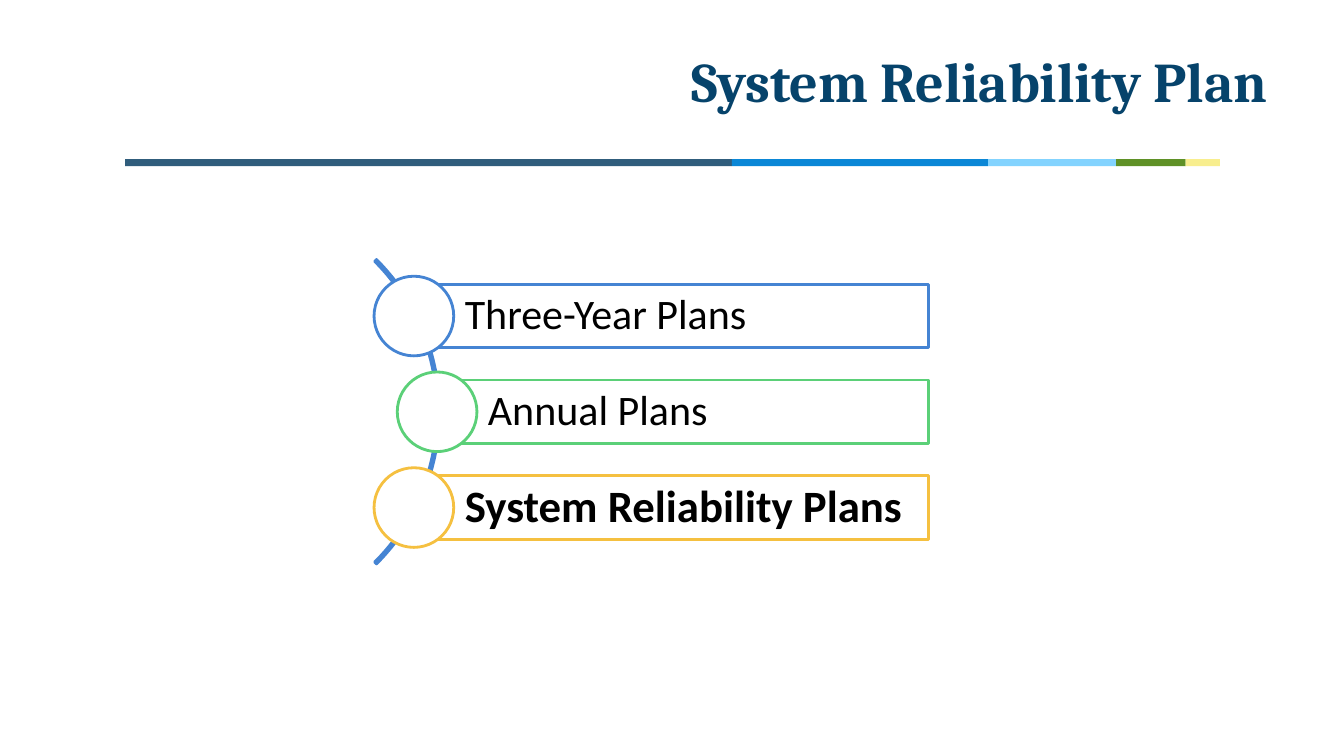
import pptx
import pptx.util
import pptx.dml.color
import pptx.enum.shapes
import pptx.enum.text

RGBColor = pptx.dml.color.RGBColor
Shapes = pptx.enum.shapes.MSO_SHAPE
Anchor = pptx.enum.text.MSO_ANCHOR
Align = pptx.enum.text.PP_ALIGN

PX = 9144
NAVY = RGBColor(0x06, 0x43, 0x6B)
BLACK = RGBColor(0x00, 0x00, 0x00)
WHITE = RGBColor(0xFF, 0xFF, 0xFF)
BLUE = RGBColor(0x45, 0x84, 0xD3)
GREEN = RGBColor(0x5B, 0xD0, 0x78)
GOLD = RGBColor(0xF5, 0xC0, 0x40)
STRIPES = [
    (602, RGBColor(0x30, 0x5D, 0x7C)),
    (254, RGBColor(0x0B, 0x87, 0xD6)),
    (127, RGBColor(0x83, 0xD3, 0xFE)),
    (69, RGBColor(0x5F, 0x91, 0x27)),
    (34, RGBColor(0xF8, 0xEE, 0x8E)),
]
PLANS = [
    ("Three-Year Plans", 411, BLUE, 30, False),
    ("Annual Plans", 434, GREEN, 30, False),
    ("System Reliability Plans", 411, GOLD, 32, True),
]
BARS_TOP, BAR_PITCH, BAR_HEIGHT, BARS_RIGHT = 282, 95, 63, 921
CIRCLE = 79


def px(*lengths):
    return [pptx.util.Emu(length * PX) for length in lengths]


def add_outline(slide, preset, box, fill=None, line=None):
    outline = slide.shapes.add_shape(preset, *px(*box))
    outline.shadow.inherit = False
    if fill is None:
        outline.fill.background()
    else:
        outline.fill.solid()
        outline.fill.fore_color.rgb = fill
    if line is None:
        outline.line.fill.background()
    else:
        outline.line.color.rgb = line
        outline.line.width = pptx.util.Pt(2)
    return outline


def write(holder, text, font, size, color, bold, align, insets):
    frame = holder.text_frame
    frame.text = text
    frame.word_wrap = True
    frame.vertical_anchor = Anchor.MIDDLE
    (frame.margin_left, frame.margin_top,
     frame.margin_right, frame.margin_bottom) = px(*insets)
    paragraph = frame.paragraphs[0]
    paragraph.alignment = align
    run_font = paragraph.runs[0].font
    run_font.name = font
    run_font.size = pptx.util.Pt(size)
    run_font.color.rgb = color
    run_font.bold = bold
    return paragraph


def add_title(slide, text):
    title = slide.shapes.add_textbox(*px(226, 17, 1041, 125))
    write(title, text, "Cambria", 40, NAVY, True, Align.RIGHT, (10, 5, 10, 5))


def add_stripes(slide):
    left = 124
    for width, color in STRIPES:
        add_outline(slide, Shapes.RECTANGLE, (left, 158, width, 7), color)
        left += width


def add_arc(slide):
    arc = add_outline(slide, Shapes.BLOCK_ARC, (9, 195, 427, 427), line=BLUE)
    for index, value in enumerate((189, 27, 0.006)):
        arc.adjustments[index] = value


def add_plan(slide, top, text, left, color, size, bold):
    bar = add_outline(slide, Shapes.RECTANGLE,
                      (left, top, BARS_RIGHT - left, BAR_HEIGHT), WHITE, color)
    paragraph = write(bar, text, "Calibri", size, BLACK, bold, Align.LEFT, (50, 8, 8, 8))
    paragraph.line_spacing = 0.9
    add_outline(slide, Shapes.OVAL,
                (left - 40, top - 8, CIRCLE, CIRCLE), WHITE, color)


def main():
    deck = pptx.Presentation()
    deck.slide_width, deck.slide_height = px(1333, 750)
    slide = deck.slides.add_slide(deck.slide_layouts[6])
    add_stripes(slide)
    add_title(slide, "System Reliability Plan")
    add_arc(slide)
    for row, plan in enumerate(PLANS):
        add_plan(slide, BARS_TOP + row * BAR_PITCH, *plan)
    deck.save("out.pptx")


if __name__ == "__main__":
    main()
